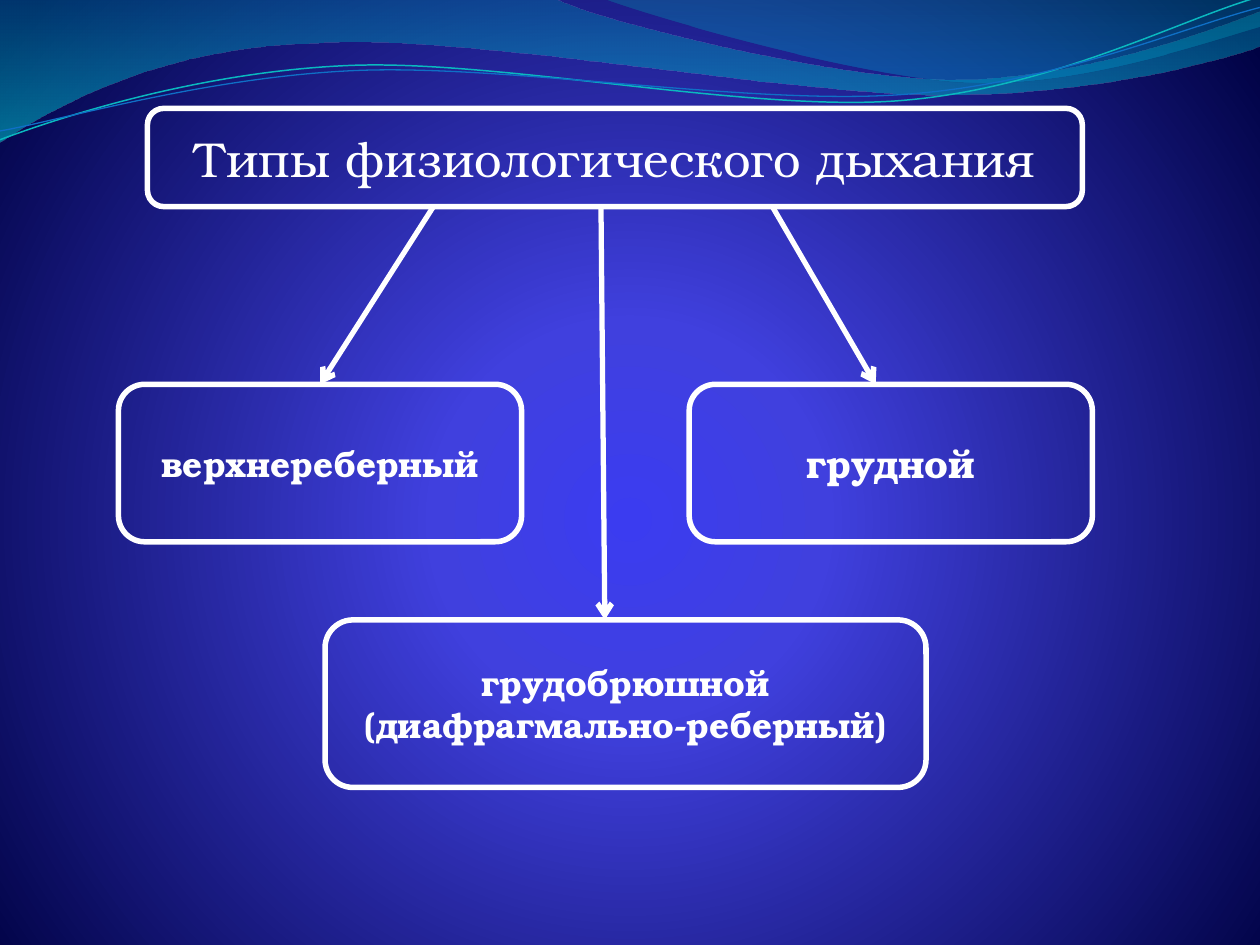
from math import cos, radians, sin

from lxml.etree import SubElement
from pptx import Presentation
from pptx.dml.color import RGBColor
from pptx.enum.shapes import MSO_CONNECTOR as CONN, MSO_SHAPE as SHAPE
from pptx.enum.text import MSO_ANCHOR as ANCHOR, PP_ALIGN as ALIGN
from pptx.oxml.ns import qn
from pptx.util import Inches, Pt

COLS, ROWS = 100, 75


def color(code):
    return RGBColor.from_string(code)


def turn(points, degrees):
    xs, ys = zip(*points)
    cx, cy = (min(xs) + max(xs)) / 2, (min(ys) + max(ys)) / 2
    c, s = cos(radians(degrees)), sin(radians(degrees))
    return [(cx + (x - cx) * c - (y - cy) * s, cy + (x - cx) * s + (y - cy) * c)
            for x, y in points]


def bend(sp, segments):
    lines = iter(list(sp.element.iter(qn("a:lnTo"))))
    for seg in segments:
        first = next(lines)
        if len(seg) == 1:
            continue
        first.tag = qn("a:cubicBezTo")
        for _ in seg[1:]:
            extra = next(lines)
            first.append(extra[0])
            extra.getparent().remove(extra)


def gradient(element, stops, center=None):
    grad = next(element.iter(qn("a:gradFill")))
    for child in list(grad):
        grad.remove(child)
    grad.set("rotWithShape", "1")
    gs_list = SubElement(grad, qn("a:gsLst"))
    for pos, code, alpha in stops:
        gs = SubElement(gs_list, qn("a:gs"), pos=str(pos * 1000))
        clr = SubElement(gs, qn("a:srgbClr"), val=code)
        if alpha < 100:
            SubElement(clr, qn("a:alpha"), val=str(alpha * 1000))
    if center:
        way = SubElement(grad, qn("a:path"))
        way.set("path", "circle")
        rect = SubElement(way, qn("a:fillToRect"))
        for side, share in zip("ltrb", center):
            rect.set(side, str(share * 1000))
    else:
        SubElement(grad, qn("a:lin"), ang="5400000", scaled="1")


class Diagram:
    font = "TeX Gyre Bonum"
    ink = "FFFFFF"

    def __init__(self, prs):
        self.s = prs.slides.add_slide(prs.slide_layouts[6])
        self.cell_w = prs.slide_width / COLS
        self.cell_h = prs.slide_height / ROWS

    def x(self, cols):
        return round(cols * self.cell_w)

    def y(self, rows):
        return round(rows * self.cell_h)

    def background(self, stops, center):
        self.s.background.fill.gradient()
        gradient(self.s.element, stops, center)

    def wave(self, start, segments, stops=None, line=None, tilt=0):
        segments = [list(zip(seg[::2], seg[1::2])) for seg in segments]
        points = turn([start] + sum(segments, []), -tilt)
        points = [(self.x(px), self.y(py)) for px, py in points]
        builder = self.s.shapes.build_freeform(*points[0], scale=1.0)
        builder.add_line_segments(points[1:], close=bool(stops))
        sp = builder.convert_to_shape()
        bend(sp, segments)
        sp.rotation = tilt
        sp.shadow.inherit = False
        if stops:
            sp.fill.gradient()
            gradient(sp.element, stops)
            sp.line.fill.background()
        else:
            sp.fill.background()
            self.outline(sp, *line)

    def outline(self, sp, code, width):
        sp.line.color.rgb = color(code)
        sp.line.width = Pt(width)

    def box(self, col, row, cols, rows, lines, size, bold=True):
        sp = self.s.shapes.add_shape(SHAPE.ROUNDED_RECTANGLE, self.x(col), self.y(row),
                                     self.x(cols), self.y(rows))
        sp.shadow.inherit = False
        sp.fill.background()
        self.outline(sp, self.ink, 3.15)
        tf = sp.text_frame
        tf.word_wrap = True
        tf.vertical_anchor = ANCHOR.MIDDLE
        tf.text = "\n".join(lines)
        for p in tf.paragraphs:
            p.alignment = ALIGN.CENTER
            p.font.name = self.font
            p.font.size = Pt(size)
            p.font.bold = bold
            p.font.color.rgb = color(self.ink)

    def arrow(self, col1, row1, col2, row2):
        cn = self.s.shapes.add_connector(CONN.STRAIGHT, self.x(col1), self.y(row1),
                                         self.x(col2), self.y(row2))
        self.outline(cn, self.ink, 3)
        SubElement(next(cn.element.iter(qn("a:ln"))), qn("a:tailEnd"), type="arrow")
        SubElement(cn.element.spPr, qn("a:effectLst"))


def main():
    prs = Presentation()
    prs.slide_width, prs.slide_height = Inches(10), Inches(7.5)
    d = Diagram(prs)

    d.background([(0, "3B3CF0", 100), (25, "4040DE", 100), (100, "000244", 100)],
                 (10, 110, 10, 100))
    d.wave((0, 0), [(44, -0.1), (47.6, 1.7, 66.4, 6.3, 75.8, 6.3),
                    (85.3, 6.3, 95.8, 2.6, 100, 0.9), (100.1, 3.6),
                    (98.3, 4.4, 87, 7.6, 74.6, 7.5), (62.2, 7.5, 38.2, 2.8, 25.7, 3.4),
                    (12.9, 3.6, 4.6, 8.3, -0.1, 11.3), (0, 0)],
           stops=[(0, "0074A1", 45), (100, "00C6CF", 55)])
    d.wave((47.9, -0.1), [(50.9, 1.1, 68.2, 6.2, 76.9, 6.5),
                          (85.6, 6.9, 96.1, 3.2, 100, 2.1), (100, 0), (47.9, -0.1)],
           stops=[(0, "00A1A9", 30), (80, "008BBF", 45)])
    d.wave((0, 11.1), [(4.8, 9.3, 15.8, 5.7, 27.7, 5.2), (39.5, 4.7, 59.3, 8.9, 71.3, 8),
                       (83.3, 7.1, 93.8, 1.5, 99.8, -0.2)],
           line=("0AB8BF", 0.85), tilt=-2.7)
    d.wave((0, 10.4), [(4.7, 9.6, 16.4, 6.1, 28.3, 5.6), (40.3, 5.1, 59.7, 8.4, 71.7, 7.5),
                       (83.6, 6.7, 94.1, 2.1, 100, 0.6)],
           line=("0F6FC6", 0.75), tilt=-2.7)

    title_end, types_row, mixed_row = 16.4, 30.5, 49.2
    d.box(11.7, 8.6, 74.2, 7.8, ["Типы физиологического дыхания"], 28, bold=False)
    for col, name, size in ((9.4, "верхнереберный", 20), (54.7, "грудной", 22)):
        d.box(col, types_row, 32, 12.5, [name], size)
    d.box(25.8, mixed_row, 47.7, 13.3, ["грудобрюшной", "(диафрагмально-реберный)"], 20)

    for col1, col2, row in ((34.4, 25.4, types_row), (61.3, 69.5, types_row),
                            (47.7, 48, mixed_row)):
        d.arrow(col1, title_end, col2, row)

    prs.save("out.pptx")


if __name__ == "__main__":
    main()
